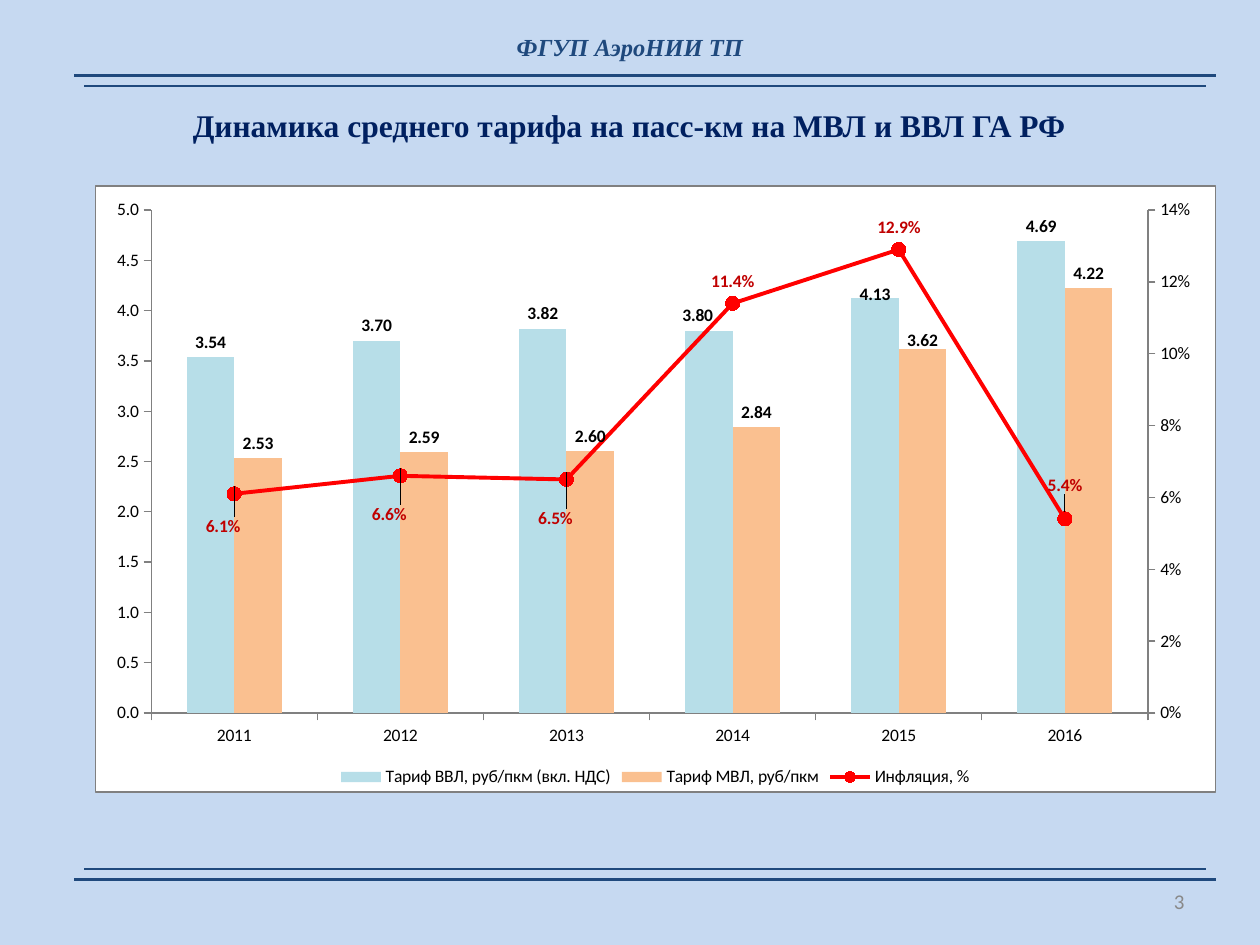
from pptx import Presentation
from pptx.chart.data import CategoryChartData
from pptx.dml.color import RGBColor
from pptx.enum.chart import (XL_CHART_TYPE, XL_LABEL_POSITION, XL_LEGEND_POSITION,
                             XL_MARKER_STYLE, XL_TICK_MARK)
from pptx.enum.shapes import MSO_CONNECTOR
from pptx.enum.text import MSO_ANCHOR, PP_ALIGN
from pptx.oxml import parse_xml
from pptx.oxml.ns import nsdecls, qn
from pptx.util import Inches, Pt

COLUMNS = XL_CHART_TYPE.COLUMN_CLUSTERED
OUTSIDE_END, ABOVE = XL_LABEL_POSITION.OUTSIDE_END, XL_LABEL_POSITION.ABOVE
BOTTOM = XL_LEGEND_POSITION.BOTTOM
CIRCLE = XL_MARKER_STYLE.CIRCLE
TICK_OUT = XL_TICK_MARK.OUTSIDE
STRAIGHT = MSO_CONNECTOR.STRAIGHT
MIDDLE = MSO_ANCHOR.MIDDLE
CENTER, RIGHT = PP_ALIGN.CENTER, PP_ALIGN.RIGHT

SERIF, SANS = "Times New Roman", "Calibri"
BACKGROUND, BLUE, NAVY, GRAY = "C6D9F1", "1F497D", "002060", "898989"
BLACK, AXIS_GRAY = "000000", "808080"

HEADER = "ФГУП АэроНИИ ТП"
TITLE = "Динамика среднего тарифа на пасс-км на МВЛ и ВВЛ ГА РФ"
PAGE_NUMBER = "3"
RULES = [(0.59, 9.65, 2, (0.6, 6.98)), (0.67, 9.57, 1.25, (0.68, 6.9))]

YEARS = ["2011", "2012", "2013", "2014", "2015", "2016"]
SERIES = [
    {"name": "Тариф ВВЛ, руб/пкм (вкл. НДС)", "format": "0.00",
     "values": [3.54, 3.70, 3.82, 3.80, 4.13, 4.69],
     "color": "B7DEE8", "label_color": BLACK, "position": OUTSIDE_END,
     "offsets": {3: (-0.01, 0), 4: (0, 0.02)}},
    {"name": "Тариф МВЛ, руб/пкм", "format": "0.00",
     "values": [2.53, 2.59, 2.60, 2.84, 3.62, 4.22],
     "color": "FAC090", "label_color": BLACK, "position": OUTSIDE_END,
     "offsets": {4: (0, 0.01)}},
    {"name": "Инфляция, %", "format": "0.0%",
     "values": [0.061, 0.066, 0.065, 0.114, 0.129, 0.054],
     "color": "FF0000", "label_color": "C00000", "position": ABOVE,
     "offsets": {0: (-0.01, 0.09), 1: (-0.01, 0.1), 2: (-0.01, 0.1), 5: (0, -0.02)}},
]

CHART_FRAME = f"""<c:spPr {nsdecls("c", "a")}>
  <a:solidFill><a:srgbClr val="FFFFFF"/></a:solidFill>
  <a:ln w="9525"><a:solidFill><a:srgbClr val="{AXIS_GRAY}"/></a:solidFill></a:ln>
</c:spPr>"""
PLOT_LAYOUT = f"""<c:layout {nsdecls("c")}><c:manualLayout>
  <c:layoutTarget val="inner"/><c:xMode val="edge"/><c:yMode val="edge"/>
  <c:x val="0.05"/><c:y val="0.04"/><c:w val="0.89"/><c:h val="0.83"/>
</c:manualLayout></c:layout>"""
LINE_PLOT = f"""<c:lineChart {nsdecls("c")}>
  <c:grouping val="standard"/><c:varyColors val="0"/>
  <c:marker val="1"/><c:axId val="501"/><c:axId val="502"/>
</c:lineChart>"""
HIDDEN_YEARS = f"""<c:catAx {nsdecls("c")}>
  <c:axId val="501"/><c:scaling><c:orientation val="minMax"/></c:scaling>
  <c:delete val="1"/><c:axPos val="b"/><c:crossAx val="502"/><c:crosses val="autoZero"/>
</c:catAx>"""
PERCENT_AXIS = f"""<c:valAx {nsdecls("c", "a")}>
  <c:axId val="502"/>
  <c:scaling><c:orientation val="minMax"/><c:max val="0.14"/><c:min val="0"/></c:scaling>
  <c:delete val="0"/><c:axPos val="r"/><c:numFmt formatCode="0%" sourceLinked="0"/>
  <c:majorTickMark val="out"/><c:minorTickMark val="none"/><c:tickLblPos val="nextTo"/>
  <c:spPr><a:ln w="9525"><a:solidFill><a:srgbClr val="{AXIS_GRAY}"/></a:solidFill></a:ln></c:spPr>
  <c:crossAx val="501"/><c:crosses val="max"/><c:majorUnit val="0.02"/>
</c:valAx>"""


def rgb(color):
    return RGBColor.from_string(color)


def set_font(font, size, color, name=SANS, bold=False, italic=False):
    font.size, font.name, font.bold, font.italic = Pt(size), name, bold, italic
    font.color.rgb = rgb(color)


def write(box, place, text, align, size, color, **style):
    box.left, box.top, box.width, box.height = map(Inches, place)
    frame = box.text_frame
    frame.word_wrap, frame.vertical_anchor = True, MIDDLE
    frame.text = text
    para = frame.paragraphs[0]
    para.alignment = align
    set_font(para.font, size, color, **style)


def add_text(page, place, *content, **style):
    write(page.shapes.add_textbox(0, 0, 0, 0), place, *content, **style)


def add_rule(page, left, right, y, width):
    rule = page.shapes.add_connector(STRAIGHT, *map(Inches, (left, y, right, y)))
    rule.line.color.rgb = rgb(BLUE)
    rule.line.width = Pt(width)
    rule._element.spPr.append(parse_xml(f'<a:effectLst {nsdecls("a")}/>'))


def move_to_second_axis(chart):
    area = chart._chartSpace.find(".//" + qn("c:plotArea"))
    for layout in area.findall(qn("c:layout")):
        area.remove(layout)
    area.insert(0, parse_xml(PLOT_LAYOUT))
    columns = area.find(qn("c:barChart"))
    series = columns.findall(qn("c:ser"))[-1]
    for setting in series.findall(qn("c:invertIfNegative")):
        series.remove(setting)
    lines = parse_xml(LINE_PLOT)
    lines.insert(2, series)
    columns.addnext(lines)
    main_axis = area.find(qn("c:valAx"))
    main_axis.addnext(parse_xml(PERCENT_AXIS))
    main_axis.addnext(parse_xml(HIDDEN_YEARS))


def add_labels(series, details):
    labels = series.data_labels
    labels.show_value = True
    labels.number_format, labels.number_format_is_linked = details["format"], False
    labels.position = details["position"]
    set_font(labels.font, 10, details["label_color"], bold=True)
    for index, (x, y) in details["offsets"].items():
        label = series.points[index].data_label
        set_font(label.font, 10, details["label_color"], bold=True)
        label.position = details["position"]
        element = next(item for item in labels._element.findall(qn("c:dLbl"))
                       if item.find(qn("c:idx")).get("val") == str(index))
        element.insert(1, parse_xml(
            f'<c:layout {nsdecls("c")}><c:manualLayout>'
            f'<c:x val="{x}"/><c:y val="{y}"/></c:manualLayout></c:layout>'))


def add_tariff_chart(page, place):
    data = CategoryChartData()
    data.categories = YEARS
    for details in SERIES:
        data.add_series(details["name"], details["values"], details["format"])
    chart = page.shapes.add_chart(COLUMNS, *map(Inches, place), data).chart
    chart.has_title = False
    set_font(chart.font, 10, BLACK)
    chart.has_legend = True
    chart.legend.position = BOTTOM
    chart.legend.include_in_layout = False
    chart._chartSpace.find(qn("c:chart")).addnext(parse_xml(CHART_FRAME))

    years, tariffs = chart.category_axis, chart.value_axis
    for axis in (years, tariffs):
        axis.has_major_gridlines = False
        axis.major_tick_mark = TICK_OUT
        axis.format.line.color.rgb = rgb(AXIS_GRAY)
    tariffs.minimum_scale, tariffs.maximum_scale, tariffs.major_unit = 0, 5, 0.5
    tariffs.tick_labels.number_format = "0.0"
    tariffs.tick_labels.number_format_is_linked = False

    move_to_second_axis(chart)
    columns, lines = chart.plots
    columns.gap_width, columns.overlap, columns.vary_by_categories = 150, 0, False
    for series, details in zip(columns.series, SERIES):
        series.format.fill.solid()
        series.format.fill.fore_color.rgb = rgb(details["color"])
    inflation, red = lines.series[0], rgb(SERIES[-1]["color"])
    inflation.smooth = False
    inflation.format.line.color.rgb = red
    inflation.format.line.width = Pt(2.25)
    marker = inflation.marker
    marker.style, marker.size = CIRCLE, 8
    marker.format.fill.solid()
    marker.format.fill.fore_color.rgb = red
    marker.format.line.color.rgb = red
    for series, details in zip([*columns.series, inflation], SERIES):
        add_labels(series, details)


def main():
    deck = Presentation()
    deck.slide_width, deck.slide_height = Inches(10), Inches(7.5)
    page = deck.slides.add_slide(deck.slide_layouts[5])
    page.background.fill.solid()
    page.background.fill.fore_color.rgb = rgb(BACKGROUND)
    add_text(page, (7.17, 6.95, 2.33, 0.4), PAGE_NUMBER, RIGHT, 12, GRAY)
    add_text(page, (0, 0.21, 10, 0.32), HEADER, CENTER, 14, BLUE,
             name=SERIF, bold=True, italic=True)
    write(page.shapes.title, (0.35, 0.68, 9.29, 0.63), TITLE, CENTER, 18, NAVY,
          name=SERIF, bold=True)
    for left, right, width, heights in RULES:
        for y in heights:
            add_rule(page, left, right, y, width)
    add_tariff_chart(page, (0.75, 1.47, 8.9, 4.82))
    deck.save("out.pptx")


if __name__ == "__main__":
    main()
